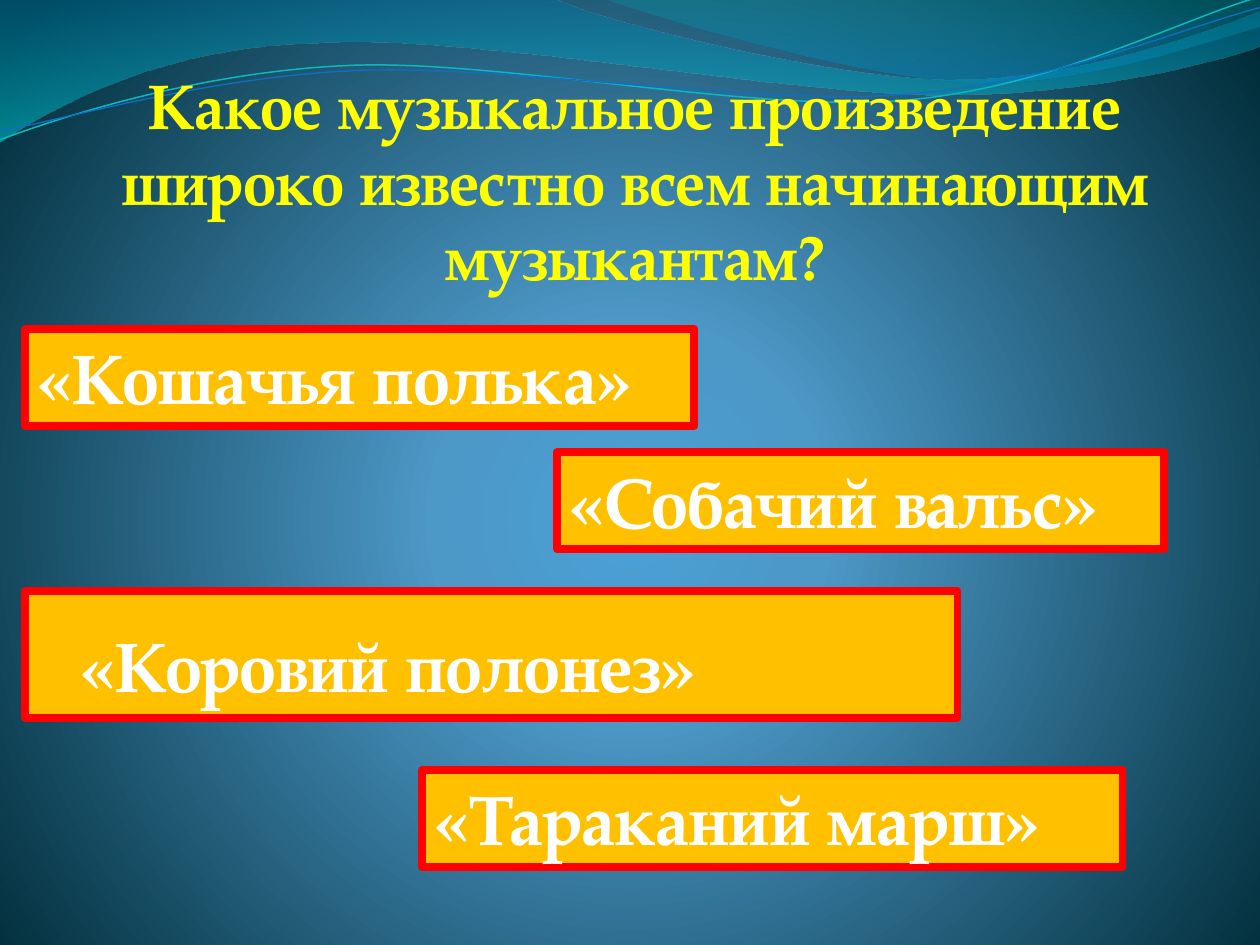
from dataclasses import dataclass
from math import cos, radians, sin

from lxml.etree import SubElement
from pptx import Presentation
from pptx.dml.color import RGBColor
from pptx.enum.shapes import MSO_SHAPE
from pptx.enum.text import MSO_ANCHOR, MSO_AUTO_SIZE, PP_ALIGN
from pptx.oxml.ns import qn
from pptx.util import Inches, Pt

COLUMNS, ROWS = 100, 75
WIDTH, HEIGHT = Inches(10), Inches(7.5)
STRAND_TURN = -2.7


@dataclass(frozen=True)
class Theme:
    """Colours, font and type sizes of the slide."""
    font: str = "TeX Gyre Pagella"
    question: str = "FFFF00"
    answer: str = "FFFFFF"
    card: str = "FFC000"
    border: str = "FF0000"
    question_size: int = 36
    answer_size: int = 40
    border_width: float = 4.5
    backdrop: tuple = ((0, "4AA0D6", 100), (25, "4C98C7", 100), (100, "002C38", 100))
    wide_ribbon: tuple = ((0, "0074A1", 45), (100, "00C6CF", 55))
    short_ribbon: tuple = ((0, "00A1A9", 30), (80, "008BBF", 45))
    upper_strand: str = "0AB8BF"
    lower_strand: str = "0F6FC6"


THEME = Theme()

WIDE_RIBBON = (-0.1, -0.1, 100.2, 11.4), [
    [(0, 0)], [(44, -0.1)],
    [(47.6, 1.7), (66.4, 6.3), (75.8, 6.3)],
    [(85.3, 6.3), (95.8, 2.6), (100, 0.9)],
    [(100.1, 3.6)],
    [(98.3, 4.4), (87, 7.6), (74.6, 7.5)],
    [(62.2, 7.5), (38.2, 2.8), (25.7, 3.4)],
    [(12.9, 3.6), (4.6, 8.3), (-0.1, 11.3)],
    [(0, 0)],
]
SHORT_RIBBON = (47.9, -0.1, 52.1, 7), [
    [(47.9, -0.1)],
    [(50.9, 1.1), (68.2, 6.2), (76.9, 6.5)],
    [(85.6, 6.9), (96.1, 3.2), (100, 2.1)],
    [(100, 0)],
    [(47.9, -0.1)],
]
UPPER_STRAND = (-0.2, 2.2, 100.2, 7.1), [
    [(0, 11.1)],
    [(4.8, 9.3), (15.8, 5.7), (27.7, 5.2)],
    [(39.5, 4.7), (59.3, 8.9), (71.3, 8)],
    [(83.3, 7.1), (93.8, 1.5), (99.8, -0.2)],
]
LOWER_STRAND = (-0.2, 3, 100.3, 5.8), [
    [(0, 10.4)],
    [(4.7, 9.6), (16.4, 6.1), (28.3, 5.6)],
    [(40.3, 5.1), (59.7, 8.4), (71.7, 7.5)],
    [(83.6, 6.7), (94.1, 2.1), (100, 0.6)],
]

QUESTION = "Какое музыкальное произведение широко известно всем начинающим музыкантам?"
ANSWERS = [
    ("«Кошачья полька»", (2, 26.1, 53.1, 7.7), (1, 0.5)),
    ("«Коровий полонез»", (2, 46.9, 74, 10.1), (4.4, 2.5)),
    ("«Собачий вальс»", (44.2, 35.9, 48.2, 7.7), (1, 0.5)),
    ("«Тараканий марш»", (33.5, 61.1, 55.6, 7.7), (1, 0.5)),
]


def across(columns):
    """Turn grid columns into a length."""
    return round(WIDTH * columns / COLUMNS)


def down(rows):
    """Turn grid rows into a length."""
    return round(HEIGHT * rows / ROWS)


def grid_box(left, top, width, height):
    """Turn a box in grid units into lengths."""
    return across(left), down(top), across(width), down(height)


def paint_gradient(fill, owner, stops, focus=None):
    """Paint a vertical gradient, or a round one when a focus is given."""
    fill.gradient()
    gradient = next(owner.iter(qn("a:gradFill")))
    for child in list(gradient):
        gradient.remove(child)
    stop_list = SubElement(gradient, qn("a:gsLst"))
    for position, colour, opacity in stops:
        stop = SubElement(stop_list, qn("a:gs"), pos=str(position * 1000))
        shade = SubElement(stop, qn("a:srgbClr"), val=colour)
        if opacity < 100:
            SubElement(shade, qn("a:alpha"), val=str(opacity * 1000))
    if focus:
        circle = SubElement(gradient, qn("a:path"), path="circle")
        edges = {side: str(share * 1000) for side, share in zip("ltrb", focus)}
        SubElement(circle, qn("a:fillToRect"), **edges)
    else:
        SubElement(gradient, qn("a:lin"), ang="5400000", scaled="0")


def local_point(point, frame, turn):
    """Place a grid point inside a frame that is turned about its centre."""
    left, top, width, height = frame
    x, y = point[0] - left - width / 2, point[1] - top - height / 2
    angle = radians(-turn)
    return (
        across(x * cos(angle) - y * sin(angle) + width / 2),
        down(x * sin(angle) + y * cos(angle) + height / 2),
    )


def add_outline(page, frame, segments, close=False, turn=0):
    """Add a freeform made of straight and curved segments."""
    anchors = [(across(x), down(y)) for x, y in (segment[-1] for segment in segments)]
    builder = page.shapes.build_freeform(*anchors[0])
    builder.add_line_segments(anchors[1:], close=close)
    shape = builder.convert_to_shape()
    shape.left, shape.top, shape.width, shape.height = grid_box(*frame)
    shape.rotation = turn
    shape.shadow.inherit = False
    outline = next(shape.element.iter(qn("a:path")))
    outline.set("w", str(shape.width))
    outline.set("h", str(shape.height))
    for command, segment in zip(list(outline), segments):
        if len(segment) == 3:
            command.tag = qn("a:cubicBezTo")
        for point in list(command):
            command.remove(point)
        for point in segment:
            x, y = local_point(point, frame, turn)
            SubElement(command, qn("a:pt"), x=str(x), y=str(y))
    return shape


def add_ribbon(page, frame, segments, stops):
    """Add a translucent ribbon."""
    ribbon = add_outline(page, frame, segments, close=True)
    paint_gradient(ribbon.fill, ribbon.element, stops)
    ribbon.line.fill.background()


def add_strand(page, frame, segments, colour, width):
    """Add a thin curved line."""
    strand = add_outline(page, frame, segments, turn=STRAND_TURN)
    strand.fill.background()
    strand.line.color.rgb = RGBColor.from_string(colour)
    strand.line.width = Pt(width)


def write_text(shape, text, size, colour, alignment):
    """Write one bold paragraph at the top of a shape."""
    frame = shape.text_frame
    frame.word_wrap = True
    frame.auto_size = MSO_AUTO_SIZE.NONE
    frame.vertical_anchor = MSO_ANCHOR.TOP
    para = frame.paragraphs[0]
    para.alignment = alignment
    span = para.add_run()
    span.text = text
    span.font.name = THEME.font
    span.font.size = Pt(size)
    span.font.bold = True
    span.font.color.rgb = RGBColor.from_string(colour)


def add_answer(page, text, place, inset):
    """Add a framed answer card."""
    card = page.shapes.add_shape(MSO_SHAPE.RECTANGLE, *grid_box(*place))
    card.shadow.inherit = False
    card.fill.solid()
    card.fill.fore_color.rgb = RGBColor.from_string(THEME.card)
    card.line.color.rgb = RGBColor.from_string(THEME.border)
    card.line.width = Pt(THEME.border_width)
    card.text_frame.margin_left = across(inset[0])
    card.text_frame.margin_top = down(inset[1])
    write_text(card, text, THEME.answer_size, THEME.answer, PP_ALIGN.LEFT)


def place_question(page):
    """Place the title in front of the other shapes."""
    title = page.shapes.title
    title.left, title.top, title.width, title.height = grid_box(5.1, 4.8, 90.6, 25.2)
    write_text(title, QUESTION, THEME.question_size, THEME.question, PP_ALIGN.CENTER)
    title.element.getparent().append(title.element)


def main():
    """Build and save the quiz slide."""
    deck = Presentation()
    deck.slide_width, deck.slide_height = WIDTH, HEIGHT
    page = deck.slides.add_slide(deck.slide_layouts[5])
    paint_gradient(page.background.fill, page.element, THEME.backdrop, (10, 110, 10, 100))
    add_ribbon(page, *WIDE_RIBBON, THEME.wide_ribbon)
    add_ribbon(page, *SHORT_RIBBON, THEME.short_ribbon)
    add_strand(page, *UPPER_STRAND, THEME.upper_strand, 0.85)
    add_strand(page, *LOWER_STRAND, THEME.lower_strand, 0.75)
    for answer in ANSWERS:
        add_answer(page, *answer)
    place_question(page)
    deck.save("out.pptx")


if __name__ == "__main__":
    main()
